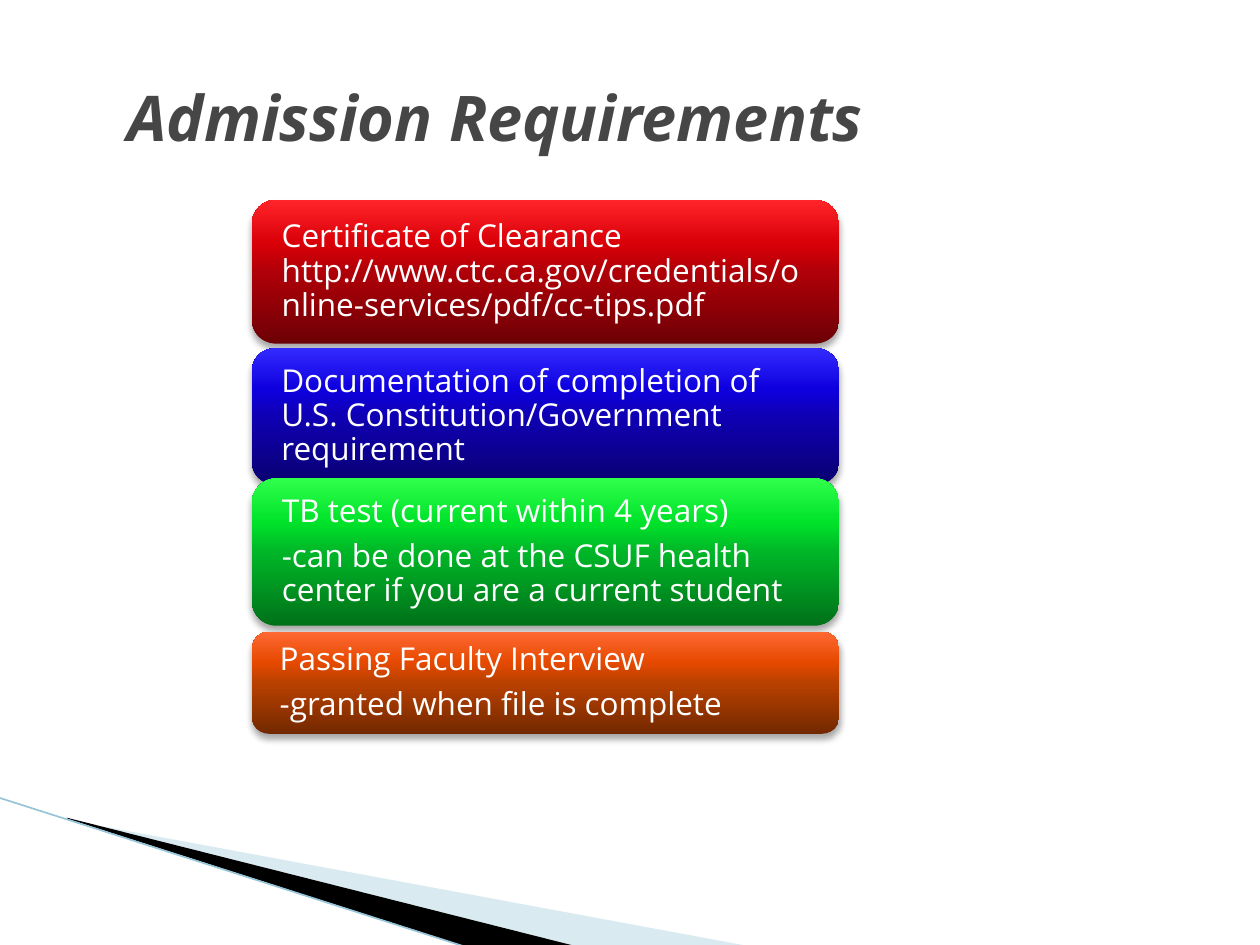
"""Build the Admission Requirements slide with four gradient requirement cards."""
from lxml import etree
from pptx import Presentation
from pptx import util as u
from pptx.dml.color import RGBColor
from pptx.enum import shapes, text
from pptx.oxml.ns import qn

FONT = "Open Sans"
WHITE = RGBColor(0xFF, 0xFF, 0xFF)
BLACK = RGBColor(0, 0, 0)
TITLE_GREY = RGBColor(0x46, 0x46, 0x46)
PALE_BLUE = RGBColor(0xA0, 0xCB, 0xDC)
EDGE_BLUE = RGBColor(0x97, 0xC5, 0xD8)

STOPS = (0, 50, 70, 100)
REDS = [RGBColor.from_string(c) for c in ("6D0005", "B00008", "DA0008", "FF2429")]
BLUES = [RGBColor.from_string(c) for c in ("09006F", "0F00B3", "0E00DE", "332AFF")]
GREENS = [RGBColor.from_string(c) for c in ("007119", "00B628", "00E22A", "2FFF4B")]
ORANGES = [RGBColor.from_string(c) for c in ("732800", "B94100", "E64900", "FF6933")]

CARD_LEFT, CARD_WIDTH = 144, 335.5
REQUIREMENTS = [
    (114.3, 82.1, REDS, ["Certificate of Clearance "
                         "http://www.ctc.ca.gov/credentials/online-services/pdf/cc-tips.pdf"]),
    (199.1, 77.8, BLUES, ["Documentation of completion of U.S. "
                          "Constitution/Government requirement"]),
    (273.4, 84.2, GREENS, ["TB test (current within 4 years)",
                           "-can be done at the CSUF health center if you are a current student"]),
    (361, 58.3, ORANGES, ["Passing Faculty Interview", "-granted when file is complete"]),
]


def add_color(parent, color, alpha=None):
    rgb = etree.SubElement(parent, qn("a:srgbClr"), val=str(color))
    if alpha is not None:
        etree.SubElement(rgb, qn("a:alpha"), val=str(alpha * 1000))


def write_text(shape, lines, size, color, inset=(0, 0, 0, 0), bold=False, italic=False,
               spacing=None, after=None):
    frame = shape.text_frame
    frame.word_wrap = True
    frame.vertical_anchor = text.MSO_ANCHOR.MIDDLE
    frame.margin_left, frame.margin_top, frame.margin_right, frame.margin_bottom = map(u.Pt, inset)
    for index, line in enumerate(lines):
        paragraph = frame.add_paragraph() if index else frame.paragraphs[0]
        paragraph.alignment = text.PP_ALIGN.LEFT
        paragraph.line_spacing = spacing
        paragraph.space_after = None if after is None else u.Pt(after)
        run = paragraph.add_run()
        run.text = line
        font = run.font
        font.name, font.size, font.bold, font.italic = FONT, u.Pt(size), bold, italic
        font.color.rgb = color


def add_shadow(shape):
    shape.shadow.inherit = False
    effects = shape._element.spPr.find(qn("a:effectLst"))
    shadow = etree.SubElement(effects, qn("a:outerShdw"), blurRad=str(u.Pt(4)),
                              dist=str(u.Pt(3)), dir="5400000", rotWithShape="0")
    add_color(shadow, BLACK, 35)


def fill_gradient(shape, colors):
    shape.fill.gradient()
    shape.fill.gradient_angle = 90
    stop_list = shape._element.spPr.find(qn("a:gradFill")).find(qn("a:gsLst"))
    for old_stop in list(stop_list):
        stop_list.remove(old_stop)
    for position, color in zip(STOPS, colors):
        add_color(etree.SubElement(stop_list, qn("a:gs"), pos=str(position * 1000)), color)


def add_card(slide, top, height, colors, lines):
    card = slide.shapes.add_shape(shapes.MSO_SHAPE.ROUNDED_RECTANGLE, u.Pt(CARD_LEFT), u.Pt(top),
                                  u.Pt(CARD_WIDTH), u.Pt(height))
    fill_gradient(card, colors)
    card.line.fill.background()
    add_shadow(card)
    write_text(card, lines, 18, WHITE, inset=(13, 0, 13, 0), spacing=0.9, after=6.3)


def add_wedge(slide, points, color, alpha=None):
    start, *corners = [(u.Pt(x), u.Pt(y)) for x, y in points]
    builder = slide.shapes.build_freeform(*start)
    builder.add_line_segments(corners, close=True)
    wedge = builder.convert_to_shape()
    wedge.shadow.inherit = False
    wedge.line.fill.background()
    wedge.fill.solid()
    wedge.fill.fore_color.rgb = color
    if alpha is not None:
        rgb = wedge._element.spPr.find(qn("a:solidFill")).find(qn("a:srgbClr"))
        etree.SubElement(rgb, qn("a:alpha"), val=str(alpha * 1000))


def add_edge(slide, start, end):
    edge = slide.shapes.add_connector(shapes.MSO_CONNECTOR.STRAIGHT, *map(u.Pt, start + end))
    edge.line.color.rgb = EDGE_BLUE
    edge.line.width = u.Pt(0.95)
    etree.SubElement(edge._element.spPr, qn("a:effectLst"))


def add_title(slide):
    title = slide.shapes.add_textbox(u.Pt(0), u.Pt(21.6), u.Pt(648), u.Pt(90))
    write_text(title, ["Admission Requirements"], 36, TITLE_GREY, inset=(72.7, 3.6, 7.2, 3.6),
               bold=True, italic=True)


def main():
    deck = Presentation()
    deck.slide_width, deck.slide_height = u.Pt(720), u.Pt(540)
    slide = deck.slides.add_slide(deck.slide_layouts[6])
    add_wedge(slide, [(39.6, 468.7), (428.4, 540.7), (328.3, 540.7), (39.6, 468)], PALE_BLUE, 40)
    add_wedge(slide, [(38.2, 467.3), (329, 540.7), (267.8, 541.4), (38.9, 468)], BLACK)
    add_edge(slide, (-0.7, 455.8), (267.1, 541.4))
    add_title(slide)
    for top, height, colors, lines in REQUIREMENTS:
        add_card(slide, top, height, colors, lines)
    deck.save("out.pptx")


if __name__ == "__main__":
    main()
